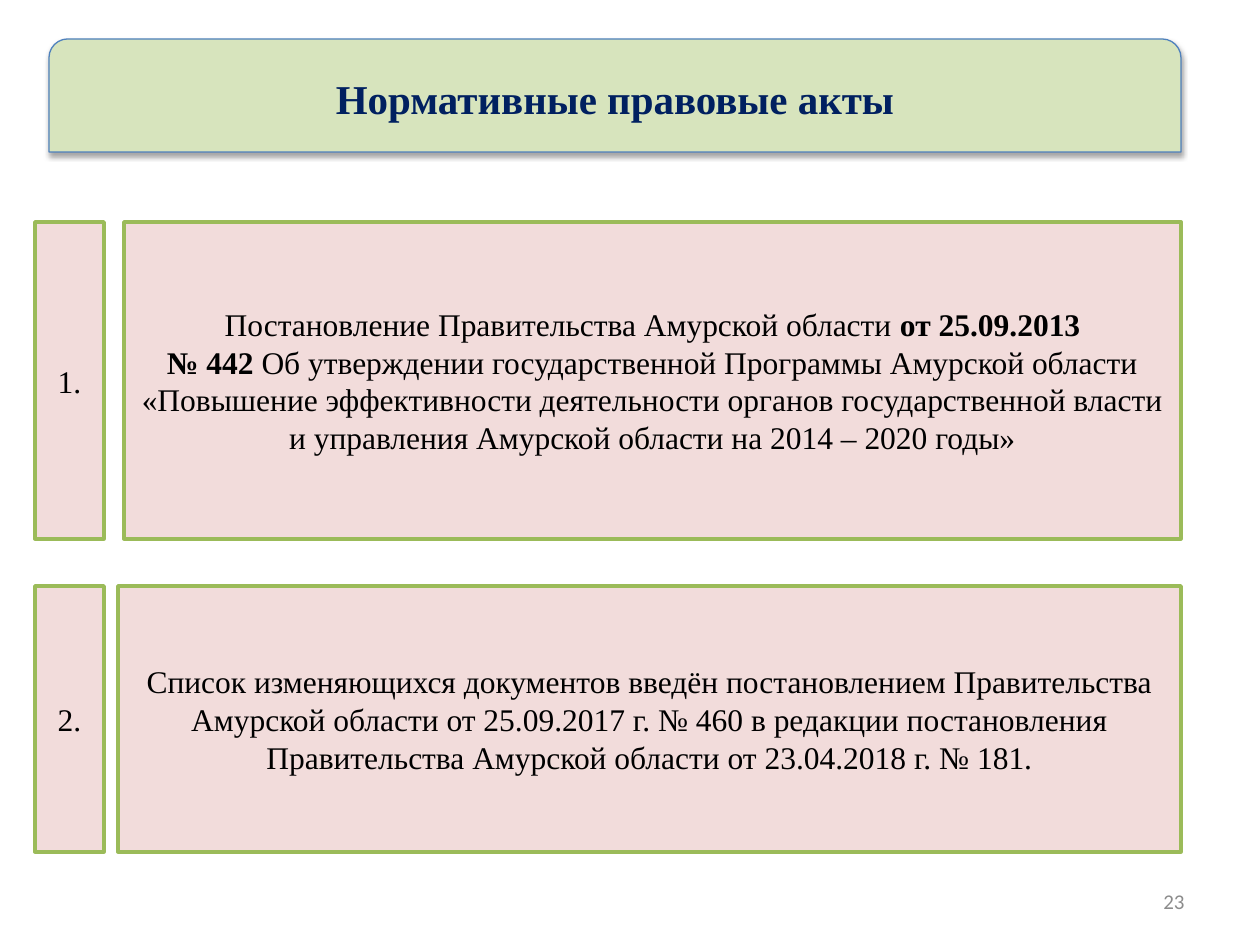
from lxml import etree
from pptx import Presentation
from pptx.dml.color import RGBColor
from pptx.enum.shapes import MSO_SHAPE as SHAPE
from pptx.enum.text import MSO_ANCHOR as ANCHOR, PP_ALIGN as ALIGN
from pptx.oxml.ns import nsdecls
from pptx.util import Pt

PX = 914400 / 126
SERIF = "Times New Roman"
COLORS = {"title_fill": "D7E4BD", "title_line": "4F81BD", "title": "002060",
          "box_fill": "F2DCDB", "box_line": "9BBB59", "text": "000000",
          "number": "8C8C8C"}

# Each text is a list of paragraphs; each paragraph is a list of (text, bold) runs
TITLE = [[("Нормативные правовые акты", True)]]
PAGE_NUMBER = [[("23", False)]]
ACTS = [
    {"top": 222, "height": 317, "left": 124, "text": [
        [("Постановление Правительства Амурской области ", False),
         ("от 25.09.2013", True)],
        [("№ 442 ", True),
         ("Об утверждении государственной Программы Амурской области "
          "«Повышение эффективности деятельности органов государственной власти "
          "и управления Амурской области на 2014 – 2020 годы»", False)]]},
    {"top": 586, "height": 266, "left": 118, "text": [
        [("Список изменяющихся документов введён постановлением Правительства "
          "Амурской области от 25.09.2017 г. № 460 в редакции постановления "
          "Правительства Амурской области от 23.04.2018 г. № 181.", False)]]},
]
NUMBER_LEFT, NUMBER_WIDTH, RIGHT = 35, 69, 1181

TITLE_FONT = {"name": SERIF, "size": Pt(23.4)}
BODY_FONT = {"name": SERIF, "size": Pt(18)}
PAGE_FONT = {"name": "Calibri", "size": Pt(12)}


def emu(*lengths):
    return [round(n * PX) for n in lengths]


def rgb(key):
    return RGBColor.from_string(COLORS[key])


def write(sp, paragraphs, font, color, align=ALIGN.CENTER):
    tf = sp.text_frame
    tf.word_wrap = True
    tf.vertical_anchor = ANCHOR.MIDDLE
    for i, runs in enumerate(paragraphs):
        p = tf.add_paragraph() if i else tf.paragraphs[0]
        p.alignment = align
        for text, bold in runs:
            r = p.add_run()
            r.text = text
            for name, value in {**font, "bold": bold}.items():
                setattr(r.font, name, value)
            r.font.color.rgb = rgb(color)


def add_panel(slide, kind, box, fill, line, width):
    sp = slide.shapes.add_shape(kind, *emu(*box))
    sp.shadow.inherit = False
    sp.fill.solid()
    sp.fill.fore_color.rgb = rgb(fill)
    sp.line.color.rgb = rgb(line)
    sp.line.width = Pt(width)
    return sp


def add_drop_shadow(sp):
    effects = sp._element.spPr.find("{*}effectLst")
    effects.append(etree.fromstring(
        f'<a:outerShdw {nsdecls("a")} blurRad="{Pt(3.1)}" dist="{Pt(1.8)}" '
        'dir="5400000" rotWithShape="0"><a:srgbClr val="000000">'
        '<a:alpha val="35000"/></a:srgbClr></a:outerShdw>'))


def main():
    prs = Presentation()
    prs.slide_width, prs.slide_height = emu(1260, 945)
    slide = prs.slides.add_slide(prs.slide_layouts[6])

    page = slide.shapes.add_textbox(*emu(903, 876, 294, 50))
    write(page, PAGE_NUMBER, PAGE_FONT, "number", ALIGN.RIGHT)

    title = add_panel(slide, SHAPE.ROUND_2_SAME_RECTANGLE, (49, 39, 1132, 113),
                      "title_fill", "title_line", 0.75)
    add_drop_shadow(title)
    write(title, TITLE, TITLE_FONT, "title")

    for number, act in enumerate(ACTS, 1):
        label = [[(f"{number}.", False)]]
        for left, width, text in ((NUMBER_LEFT, NUMBER_WIDTH, label),
                                  (act["left"], RIGHT - act["left"], act["text"])):
            sp = add_panel(slide, SHAPE.RECTANGLE,
                           (left, act["top"], width, act["height"]),
                           "box_fill", "box_line", 2)
            write(sp, text, BODY_FONT, "text")

    prs.save("out.pptx")


if __name__ == "__main__":
    main()
